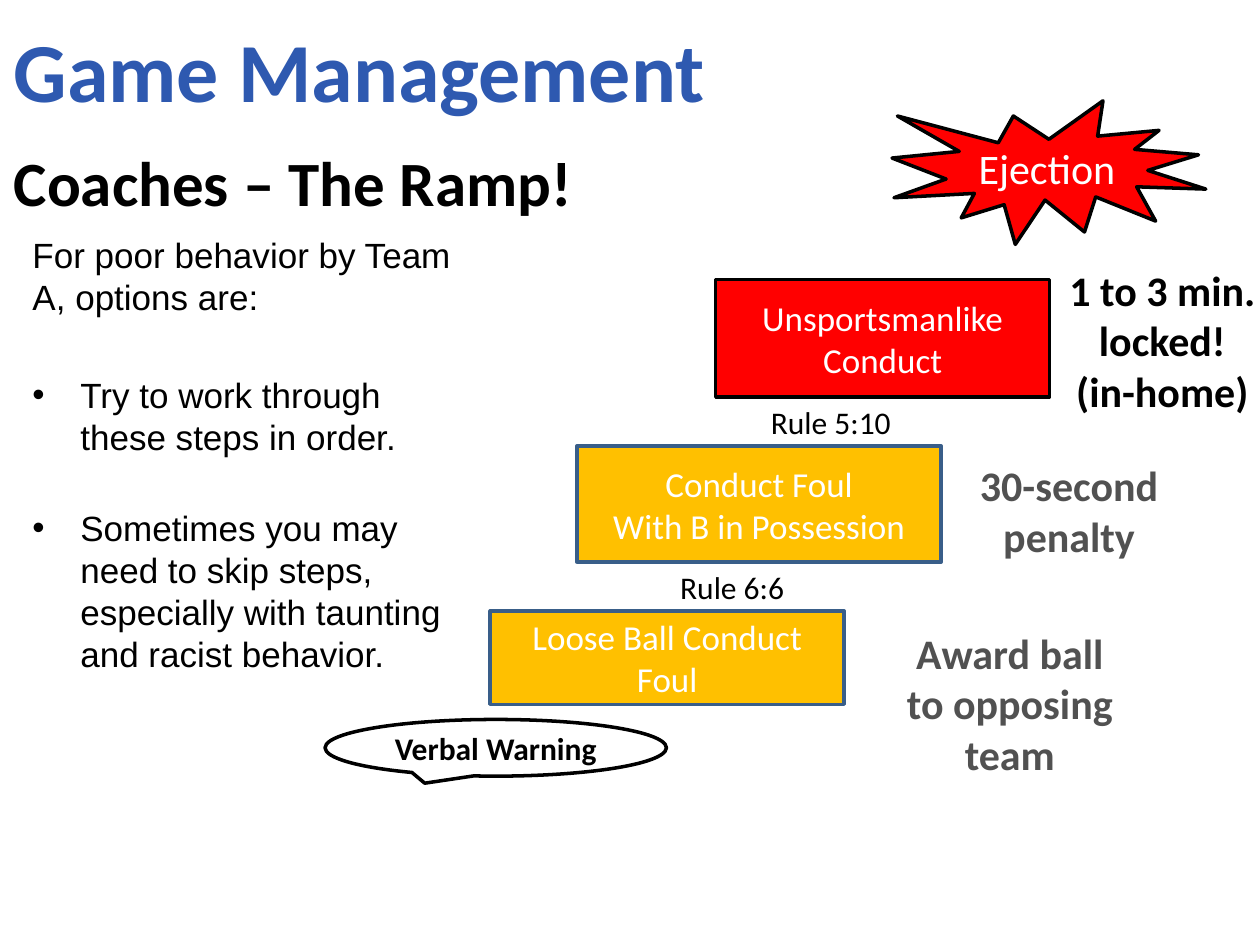
from dataclasses import dataclass

from lxml import etree
from pptx import Presentation
from pptx.dml.color import RGBColor
from pptx.enum.shapes import MSO_SHAPE
from pptx.enum.text import MSO_ANCHOR, PP_ALIGN
from pptx.oxml.ns import qn
from pptx.util import Inches, Pt

LEFT, CENTER = PP_ALIGN.LEFT, PP_ALIGN.CENTER
TOP, MIDDLE = MSO_ANCHOR.TOP, MSO_ANCHOR.MIDDLE
RECTANGLE = MSO_SHAPE.RECTANGLE
BURST = MSO_SHAPE.EXPLOSION1
CALLOUT = MSO_SHAPE.OVAL_CALLOUT


@dataclass(frozen=True)
class Theme:
    heading_font: str = "Calibri"
    body_font: str = "Arial"
    blue: RGBColor = RGBColor(0x2E, 0x59, 0xB0)
    steel: RGBColor = RGBColor(0x39, 0x5E, 0x89)
    amber: RGBColor = RGBColor(0xFF, 0xC0, 0x00)
    red: RGBColor = RGBColor(0xFF, 0x00, 0x00)
    gray: RGBColor = RGBColor(0x51, 0x51, 0x51)
    black: RGBColor = RGBColor(0, 0, 0)
    white: RGBColor = RGBColor(0xFF, 0xFF, 0xFF)
    title: int = 48
    subtitle: int = 36
    penalty: int = 24
    body: int = 20
    label: int = 18
    outline: int = 2


THEME = Theme()


def write(shape, text, size, color, bold=False, font=THEME.heading_font,
          align=CENTER, anchor=TOP, wrap=True):
    """Fill a shape with one paragraph per line of text; return the paragraphs."""
    frame = shape.text_frame
    frame.word_wrap = wrap
    frame.vertical_anchor = anchor
    frame.text = text
    for paragraph in frame.paragraphs:
        paragraph.alignment = align
        paragraph.font.name = font
        paragraph.font.size = Pt(size)
        paragraph.font.bold = bold
        paragraph.font.color.rgb = color
    return frame.paragraphs


def add_text(slide, box, text, size, color, **style):
    shape = slide.shapes.add_textbox(*map(Inches, box))
    write(shape, text, size, color, **style)
    return shape


def add_block(slide, kind, box, fill, line, text, size, color, bold=False):
    shape = slide.shapes.add_shape(kind, *map(Inches, box))
    shape.shadow.inherit = False
    shape.fill.solid()
    shape.fill.fore_color.rgb = fill
    shape.line.color.rgb = line
    shape.line.width = Pt(THEME.outline)
    write(shape, text, size, color, bold=bold, anchor=MIDDLE)
    return shape


def add_heading(slide, box, text, size, color):
    shape = add_text(slide, box, text, size, color, bold=True, align=LEFT)
    frame = shape.text_frame
    frame.margin_left = frame.margin_right = 0
    frame.margin_top = frame.margin_bottom = 0
    frame.paragraphs[0].line_spacing = 0.9


def add_bullet(paragraph, indent):
    properties = paragraph._p.get_or_add_pPr()
    properties.set("marL", str(Inches(indent)))
    properties.set("indent", str(-Inches(indent)))
    etree.SubElement(properties, qn("a:buFont")).set("typeface", THEME.body_font)
    etree.SubElement(properties, qn("a:buChar")).set("char", "•")


def add_options(slide, box):
    """Place the introduction and its bulleted advice."""
    shape = slide.shapes.add_textbox(*map(Inches, box))
    shape.text_frame.text = (
        "For poor behavior by Team A, options are:\n"
        "Try to work through these steps in order.\n"
        "Sometimes you may need to skip steps, especially with taunting "
        "and racist behavior.")
    introduction, *advice = shape.text_frame.paragraphs
    for paragraph, space in zip(advice, (32, 28)):
        paragraph.space_before = Pt(space)
        add_bullet(paragraph, 0.38)
    shape.text_frame.word_wrap = True
    for paragraph in (introduction, *advice):
        paragraph.line_spacing = Pt(24)
        paragraph.font.name = THEME.body_font
        paragraph.font.size = Pt(THEME.body)
        paragraph.font.color.rgb = THEME.black


def add_step(slide, box, text, fill, line, penalty, penalty_offset,
             penalty_size, penalty_color, rule=None, rule_offset=0):
    """Place a ramp step with its penalty beside it and its rule below it."""
    left, top, width, height = box
    add_block(slide, RECTANGLE, box, fill, line, text, THEME.body, THEME.white)
    offset_x, offset_y = penalty_offset
    add_text(slide, (left + offset_x, top + offset_y, *penalty_size),
             penalty, THEME.penalty, penalty_color, bold=True)
    if rule:
        add_text(slide, (left + rule_offset, top + height, 1.17, 0.4), rule,
                 THEME.label, THEME.black, align=LEFT, wrap=False)


def add_ramp(slide, box):
    """Place the steps from the verbal warning up to ejection."""
    left, top = box[:2]
    warning = add_block(slide, CALLOUT, (left, top + 4.91, 2.71, 0.45),
                        THEME.white, THEME.black, "Verbal Warning",
                        THEME.label, THEME.black, bold=True)
    warning.adjustments[0] = -0.208
    warning.adjustments[1] = 0.625
    add_step(slide, (left + 1.31, top + 4.05, 2.81, 0.74),
             "Loose Ball Conduct Foul", THEME.amber, THEME.steel,
             "Award ball to opposing team", (3.11, 0.08), (2.03, 1.31),
             THEME.gray)
    add_step(slide, (left + 2, top + 2.74, 2.89, 0.92),
             "Conduct Foul\nWith B in Possession", THEME.amber, THEME.steel,
             "30-second penalty", (2.98, 0.06), (1.85, 1.04), THEME.gray,
             "Rule 6:6", 0.72)
    add_step(slide, (left + 3.1, top + 1.42, 2.65, 0.93),
             "Unsportsmanlike\nConduct", THEME.red, THEME.black,
             "1 to 3 min. locked!\n(in-home)", (2.45, -0.17), (2.19, 1.41),
             THEME.black, "Rule 5:10", 0.34)
    add_block(slide, BURST, (left + 4.5, top, 2.49, 1.14), THEME.red,
              THEME.black, "Ejection", THEME.penalty, THEME.white)


def main():
    presentation = Presentation()
    presentation.slide_width = Inches(10)
    presentation.slide_height = Inches(7.5)
    slide = presentation.slides.add_slide(presentation.slide_layouts[6])
    add_heading(slide, (0.11, 0.24, 9.17, 0.73), "Game Management",
                THEME.title, THEME.blue)
    add_heading(slide, (0.11, 1.21, 6.91, 0.55), "Coaches – The Ramp!",
                THEME.subtitle, THEME.black)
    add_options(slide, (0.16, 1.8, 3.67, 3.91))
    add_ramp(slide, (2.58, 0.8, 7.42, 5.44))
    presentation.save("out.pptx")


if __name__ == "__main__":
    main()
